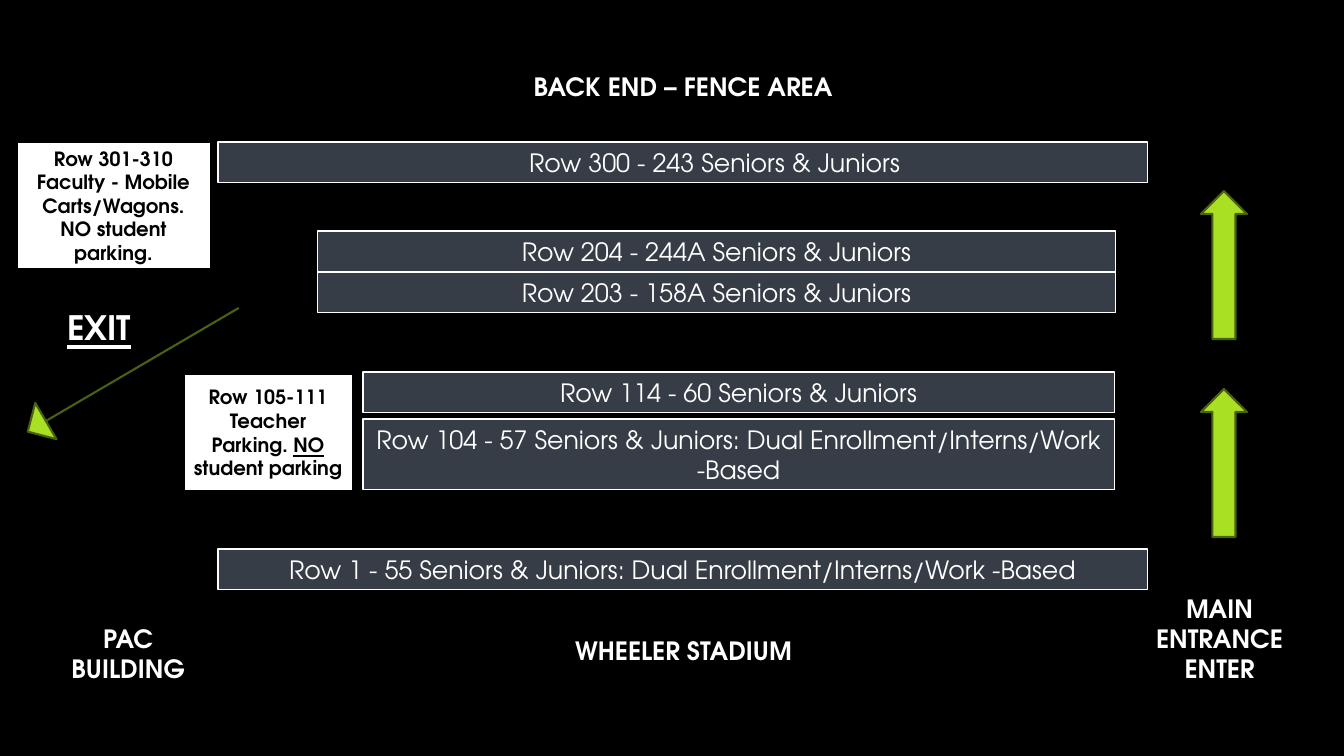
import pptx
import pptx.dml.color
import pptx.enum.shapes
import pptx.enum.text
import pptx.util

PX = 914400 / 100.8
FONT = "TeX Gyre Adventor"
WHITE, BLACK, SLATE = "FFFFFF", "000000", "363D46"
LIME, OLIVE = "A9E023", "4A620F"
SHAPE = pptx.enum.shapes.MSO_SHAPE
ALIGN = pptx.enum.text.PP_ALIGN
ANCHOR = pptx.enum.text.MSO_ANCHOR


def px(n):
    return pptx.util.Emu(round(n * PX))


def rgb(value):
    return pptx.dml.color.RGBColor.from_string(value)


def write(sp, paragraphs, size, color, bold=False, align=ALIGN.CENTER,
          anchor=ANCHOR.MIDDLE, inset=9):
    """Each paragraph is a list of (text, underline) runs."""
    tf = sp.text_frame
    frame = {"word_wrap": True, "vertical_anchor": anchor,
             "margin_left": px(inset)}
    for name, value in frame.items():
        setattr(tf, name, value)
    for i, runs in enumerate(paragraphs):
        p = tf.add_paragraph() if i else tf.paragraphs[0]
        p.alignment = align
        for text, underline in runs:
            r = p.add_run()
            r.text = text
            font = {"name": FONT, "size": pptx.util.Pt(size),
                    "bold": bold, "underline": underline}
            for name, value in font.items():
                setattr(r.font, name, value)
            r.font.color.rgb = rgb(color)


def add_block(s, kind, box, fill, line, width):
    sp = s.shapes.add_shape(kind, *map(px, box))
    sp.shadow.inherit = False
    sp.fill.solid()
    sp.fill.fore_color.rgb = rgb(fill)
    sp.line.color.rgb = rgb(line)
    sp.line.width = pptx.util.Pt(width)
    return sp


def add_row(s, text, box, inset=9):
    sp = add_block(s, SHAPE.RECTANGLE, box, SLATE, WHITE, 0.75)
    write(sp, [[(text, False)]], 18, WHITE, inset=inset)


def add_note(s, paragraphs, box):
    sp = add_block(s, SHAPE.RECTANGLE, box, WHITE, BLACK, 1.5)
    write(sp, paragraphs, 14, BLACK, bold=True)


def add_arrow(s, kind, box):
    return add_block(s, kind, box, LIME, OLIVE, 1.5)


def add_label(s, lines, box, size=18, underline=False, align=ALIGN.CENTER):
    sp = s.shapes.add_textbox(*map(px, box))
    write(sp, [[(line, underline)] for line in lines], size, WHITE,
          bold=True, align=align, anchor=ANCHOR.TOP)


def main():
    prs = pptx.Presentation()
    prs.slide_width, prs.slide_height = px(1344), px(756)
    s = prs.slides.add_slide(prs.slide_layouts[6])
    s.background.fill.solid()
    s.background.fill.fore_color.rgb = rgb(BLACK)

    # Parking rows, from the fence to the stadium
    dual = "Seniors & Juniors: Dual Enrollment/Interns/Work -Based"
    add_row(s, "Row 300 - 243 Seniors & Juniors", (218, 142, 930, 41), inset=73)
    add_row(s, "Row 204 - 244A Seniors & Juniors", (318, 231, 798, 41))
    add_row(s, "Row 203 - 158A Seniors & Juniors", (318, 272, 798, 41))
    add_row(s, "Row 114 - 60 Seniors & Juniors", (363, 372, 752, 41))
    add_row(s, "Row 104 - 57 " + dual, (363, 419, 752, 71))
    add_row(s, "Row 1 - 55 " + dual, (218, 549, 930, 41))

    # Staff parking notes
    add_note(s, [[("Row 301-310", False)],
                 [("Faculty - Mobile Carts/Wagons. NO student parking.", False)]],
             (17, 142, 194, 127))
    add_note(s, [[("Row 105-111", False)],
                 [("Teacher Parking. ", False), ("NO", True),
                  (" student parking", False)]],
             (184, 374, 169, 117))

    # Traffic direction
    for top in (191, 389):
        add_arrow(s, SHAPE.UP_ARROW, (1201, top, 46, 148))
    way_out = add_arrow(s, SHAPE.DOWN_ARROW, (112, 248, 42, 244))
    way_out.adjustments[0], way_out.adjustments[1] = 0, 0.5
    way_out.rotation = 59.6

    # Landmarks
    add_label(s, ["BACK END – FENCE AREA"], (518, 66, 331, 40))
    add_label(s, ["WHEELER STADIUM"], (330, 630, 708, 40))
    add_label(s, ["PAC BUILDING"], (34, 618, 189, 71))
    add_label(s, ["MAIN ENTRANCE", "ENTER"], (1131, 588, 178, 132))
    add_label(s, ["EXIT"], (58, 302, 108, 50), 24, True, ALIGN.LEFT)

    prs.save("out.pptx")


if __name__ == "__main__":
    main()
